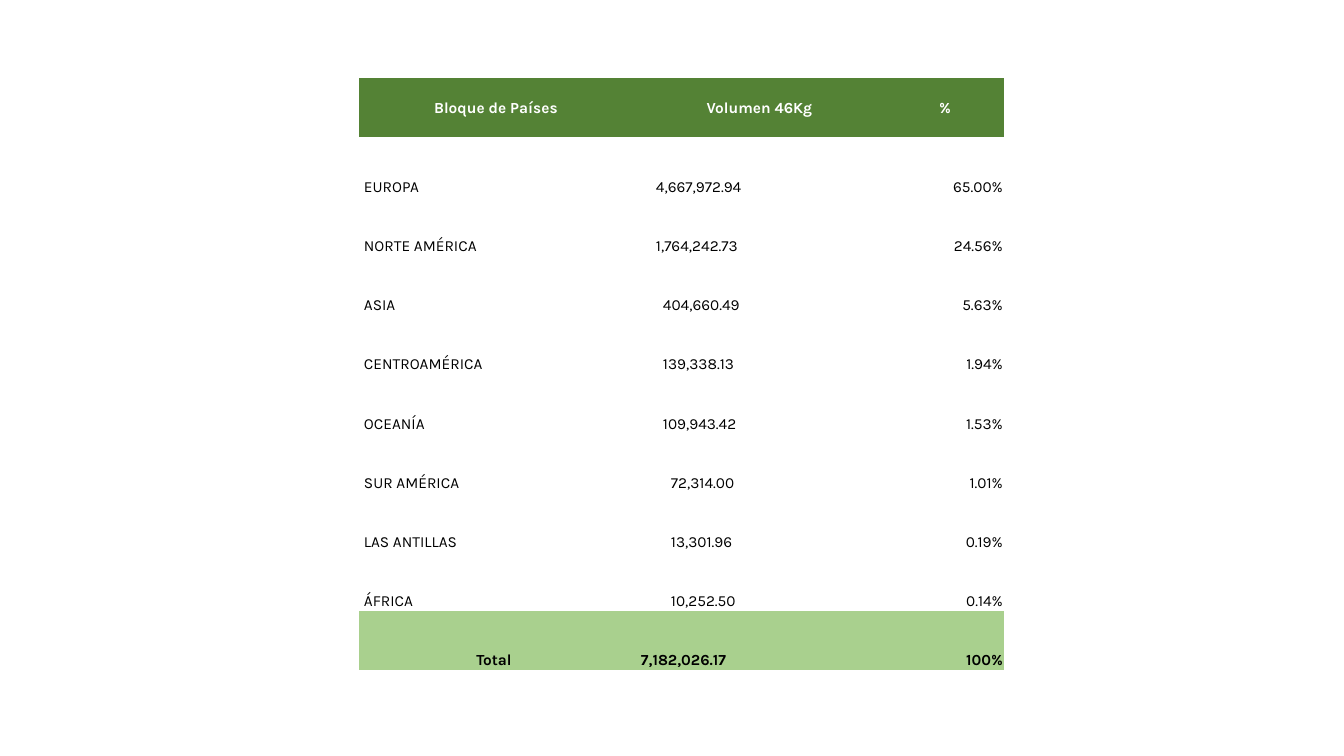
from pptx import Presentation
from pptx.dml.color import RGBColor
from pptx.enum.text import MSO_ANCHOR as Anchor, PP_ALIGN as Align
from pptx.util import Emu, Pt

# Content
HEADER = ("Bloque de Países", "Volumen 46Kg", "%")
BLOCKS = [
    ("EUROPA", "4,667,972.94", "65.00%"),
    ("NORTE AMÉRICA", "1,764,242.73", "24.56%"),
    ("ASIA", "404,660.49", "5.63%"),
    ("CENTROAMÉRICA", "139,338.13", "1.94%"),
    ("OCEANÍA", "109,943.42", "1.53%"),
    ("SUR AMÉRICA", "72,314.00", "1.01%"),
    ("LAS ANTILLAS", "13,301.96", "0.19%"),
    ("ÁFRICA", "10,252.50", "0.14%"),
]
TOTAL = ("Total", "7,182,026.17", "100%")

# Layout in px
PAGE_WIDTH, PAGE_HEIGHT = 1344, 756
TABLE_LEFT, TABLE_TOP, TABLE_HEIGHT = 359, 78, 592
COLUMN_WIDTHS = (274, 253, 118)
NAME_INSET, TOTAL_INSET = 5, 8
VOLUME_INSETS = {12: 23, 10: 30, 9: 38}  # by length of the number

# Style
FONT, SIZE = "Karla", 11
DARK_GREEN, LIGHT_GREEN, WHITE, BLACK = "548235", "A9D08E", "FFFFFF", "000000"
NO_STYLE = "{2D5ABB26-0587-4C30-8999-92F81FD0307C}"


def px(length):
    return Emu(round(length * 914400 / 100.8))


def color(code):
    return RGBColor.from_string(code)


def write(cell, text, fill=WHITE, ink=BLACK, bold=False, align=Align.LEFT,
          anchor=Anchor.BOTTOM, left=1, right=1):
    cell.fill.solid()
    cell.fill.fore_color.rgb = color(fill)
    cell.margin_left, cell.margin_right = px(left), px(right)
    cell.margin_top, cell.margin_bottom = px(1), 0
    cell.vertical_anchor = anchor
    para = cell.text_frame.paragraphs[0]
    para.alignment = align
    span = para.add_run()
    span.text = text
    span.font.name, span.font.size, span.font.bold = FONT, Pt(SIZE), bold
    span.font.color.rgb = color(ink)


deck = Presentation()
deck.slide_width, deck.slide_height = px(PAGE_WIDTH), px(PAGE_HEIGHT)
page = deck.slides.add_slide(deck.slide_layouts[6])

# Empty grid without style
row_count = len(BLOCKS) + 2
table = page.shapes.add_table(
    row_count, len(HEADER), px(TABLE_LEFT), px(TABLE_TOP),
    px(sum(COLUMN_WIDTHS)), px(TABLE_HEIGHT)).table
table.first_row = table.horz_banding = False
table._tbl.tblPr[0].text = NO_STYLE
for column, width in zip(table.columns, COLUMN_WIDTHS):
    column.width = px(width)
for row in table.rows:
    row.height = px(TABLE_HEIGHT / row_count)

# Header
for index, title in enumerate(HEADER):
    write(table.cell(0, index), title, fill=DARK_GREEN, ink=WHITE, bold=True,
          align=Align.CENTER, anchor=Anchor.MIDDLE)

# Country blocks
for index, (name, volume, share) in enumerate(BLOCKS, start=1):
    write(table.cell(index, 0), name, left=NAME_INSET)
    write(table.cell(index, 1), volume, left=VOLUME_INSETS[len(volume)])
    write(table.cell(index, 2), share, align=Align.RIGHT)

# Total
total_formats = (
    {"align": Align.CENTER, "right": NAME_INSET},
    {"left": TOTAL_INSET},
    {"align": Align.RIGHT},
)
for index, (text, options) in enumerate(zip(TOTAL, total_formats)):
    write(table.cell(row_count - 1, index), text, fill=LIGHT_GREEN, bold=True,
          **options)

deck.save("out.pptx")
